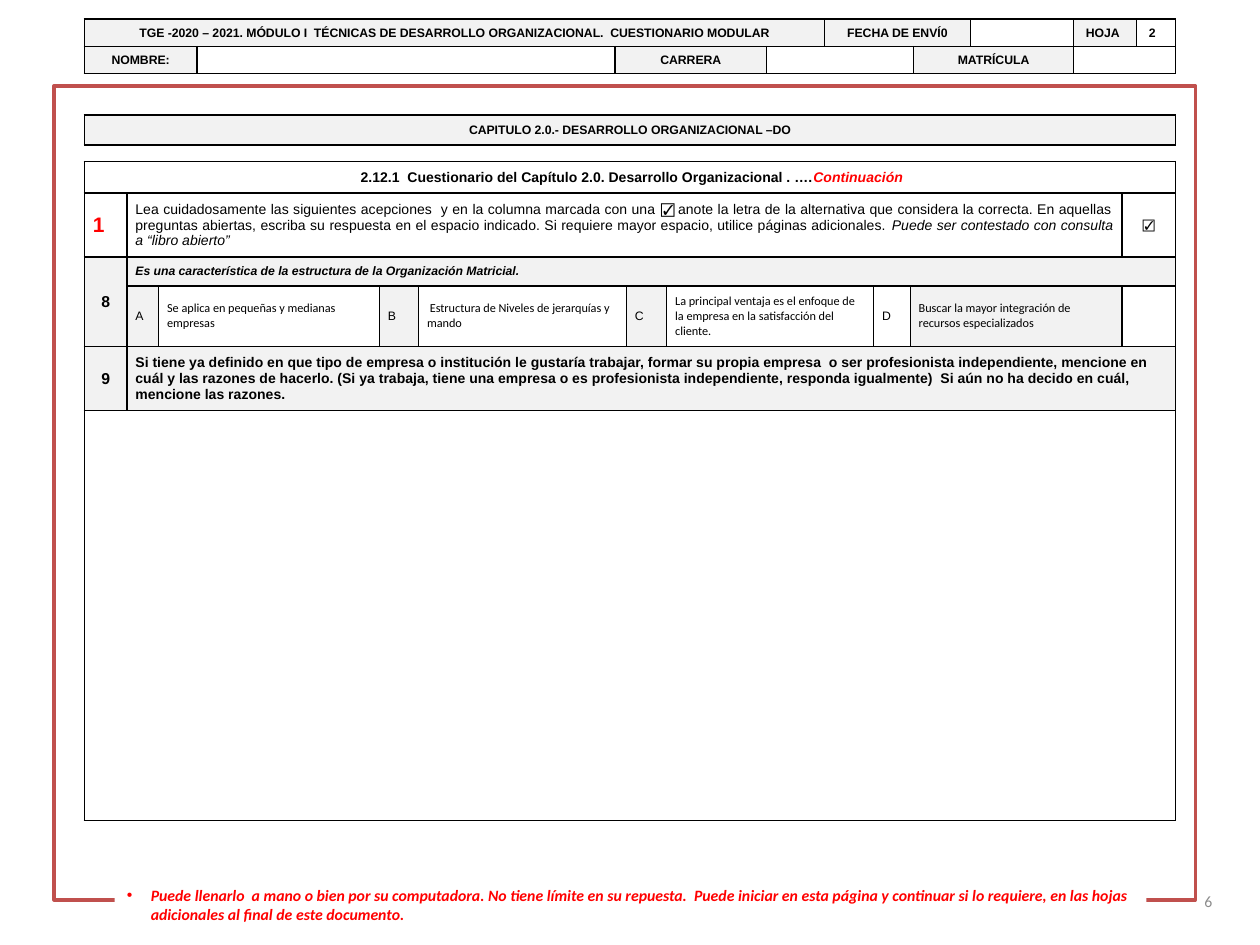
from lxml.etree import SubElement
from pptx import Presentation
from pptx.dml.color import RGBColor
from pptx.enum.shapes import MSO_SHAPE
from pptx.enum.text import MSO_ANCHOR, PP_ALIGN
from pptx.oxml.ns import qn
from pptx.util import Cm, Pt

BLACK, RED, WHITE, GREY = "000000", "FF0000", "FFFFFF", "F2F2F2"
LEFT, CENTER, RIGHT, JUSTIFY = PP_ALIGN.LEFT, PP_ALIGN.CENTER, PP_ALIGN.RIGHT, PP_ALIGN.JUSTIFY


def colour(code):
    return RGBColor.from_string(code)


def write(frame, runs, align):
    """Write (text, format) runs; each run keeps the formats of the one before."""
    paragraph = frame.paragraphs[0]
    paragraph.alignment = align
    style = {"name": "Arial", "size": 7, "bold": True, "italic": False, "color": BLACK}
    for text, changes in runs:
        style.update(changes)
        run = paragraph.add_run()
        run.text = text
        for attribute, value in style.items():
            if attribute == "color":
                run.font.color.rgb = colour(value)
            else:
                setattr(run.font, attribute, Pt(value) if attribute == "size" else value)
    return paragraph


deck = Presentation()
deck.slide_width, deck.slide_height = Cm(25.4), Cm(19.05)
slide = deck.slides.add_slide(deck.slide_layouts[6])

# Red page frame
frame = slide.shapes.add_shape(MSO_SHAPE.RECTANGLE, Cm(1.09), Cm(1.73), Cm(23.01), Cm(16.41))
frame.shadow.inherit = False
frame.fill.solid()
frame.fill.fore_color.rgb = colour(WHITE)
frame.line.color.rgb = colour("C0504D")
frame.line.width = Pt(2)

# Page number
page_number = slide.shapes.add_textbox(Cm(18.77), Cm(17.65), Cm(5.92), Cm(1.02)).text_frame
page_number.word_wrap = True
page_number.vertical_anchor = MSO_ANCHOR.MIDDLE
write(page_number, [("6", {"name": "Calibri", "size": 9, "bold": False, "color": "8C8C8C"})], RIGHT)

# Closing note over the lower edge of the frame
note = slide.shapes.add_shape(MSO_SHAPE.RECTANGLE, Cm(2.31), Cm(17.93), Cm(20.8), Cm(0.61))
note.shadow.inherit = False
note.fill.solid()
note.fill.fore_color.rgb = colour(WHITE)
note.line.fill.background()
note.text_frame.word_wrap = True
note.text_frame.vertical_anchor = MSO_ANCHOR.MIDDLE
advice = write(note.text_frame, [(
    "Puede llenarlo  a mano o bien por su computadora. No tiene límite en su repuesta.  "
    "Puede iniciar en esta página y continuar si lo requiere, en las hojas adicionales al "
    "final de este documento.",
    {"name": "Calibri", "size": 9, "italic": True, "color": RED})], LEFT)
bullet_format = advice._p.get_or_add_pPr()
bullet_format.set("marL", str(Cm(0.48)))
bullet_format.set("indent", str(-Cm(0.48)))
SubElement(bullet_format, qn("a:buFont")).set("typeface", "Arial")
SubElement(bullet_format, qn("a:buChar")).set("char", "•")

# Table contents: (row, column): (row span, column span, fill, alignment, runs)
header_cells = {
    (0, 0): (1, 4, GREY, CENTER, [(
        "TGE -2020 – 2021. MÓDULO I  TÉCNICAS DE DESARROLLO ORGANIZACIONAL.  "
        "CUESTIONARIO MODULAR", {})]),
    (0, 4): (1, 2, GREY, CENTER, [("FECHA DE ENVÍ0", {})]),
    (0, 7): (1, 1, GREY, LEFT, [("HOJA", {})]),
    (0, 8): (1, 1, WHITE, LEFT, [("2", {})]),
    (1, 0): (1, 1, GREY, CENTER, [("NOMBRE:", {})]),
    (1, 2): (1, 1, GREY, CENTER, [("CARRERA", {})]),
    (1, 3): (1, 2, WHITE, LEFT, []),
    (1, 5): (1, 2, GREY, CENTER, [("MATRÍCULA", {})]),
    (1, 7): (1, 2, WHITE, LEFT, []),
}
question_cells = {
    (0, 0): (1, 10, GREY, CENTER, [("CAPITULO 2.0.- DESARROLLO ORGANIZACIONAL –DO", {})]),
    (1, 0): (1, 10, WHITE, LEFT, []),
    (2, 0): (1, 10, WHITE, CENTER, [
        (" 2.12.1  Cuestionario del Capítulo 2.0. Desarrollo Organizacional . ….", {"size": 8}),
        ("Continuación", {"color": RED, "italic": True})]),
    (3, 0): (1, 1, WHITE, JUSTIFY, [("1", {"size": 12, "color": RED})]),
    (3, 1): (1, 8, WHITE, JUSTIFY, [
        ("Lea cuidadosamente las siguientes acepciones  y en la columna marcada con una ☑ "
         "anote la letra de la alternativa que considera la correcta. En aquellas preguntas "
         "abiertas, escriba su respuesta en el espacio indicado. Si requiere mayor espacio, "
         "utilice páginas adicionales. ", {"size": 8, "bold": False}),
        ("Puede ser contestado con consulta a “libro abierto”", {"italic": True})]),
    (3, 9): (1, 1, WHITE, CENTER, [("☑", {})]),
    (4, 0): (2, 1, GREY, CENTER, [("8", {"size": 9})]),
    (4, 1): (1, 9, GREY, LEFT, [(
        "Es una característica de la estructura de la Organización Matricial.",
        {"italic": True})]),
    (6, 0): (1, 1, GREY, CENTER, [("9", {"size": 9})]),
    (6, 1): (1, 9, GREY, LEFT, [(
        "Si tiene ya definido en que tipo de empresa o institución le gustaría trabajar, formar "
        "su propia empresa  o ser profesionista independiente, mencione en  cuál y las razones "
        "de hacerlo. (Si ya trabaja, tiene una empresa o es profesionista independiente, "
        "responda igualmente)  Si aún no ha decido en cuál, mencione las razones.",
        {"size": 8})]),
    (7, 0): (1, 10, WHITE, LEFT, []),
}
# Alternatives of question 8: a letter and an answer each
alternatives = [
    ("A", GREY, "Se aplica en pequeñas y medianas empresas", WHITE),
    ("B", GREY, " Estructura de Niveles de jerarquías y mando", WHITE),
    ("C", GREY, "La principal ventaja es el enfoque de la empresa en la satisfacción del cliente.",
     WHITE),
    ("D", WHITE, "Buscar la mayor integración de recursos especializados", GREY),
]
for index, (letter, letter_fill, answer, answer_fill) in enumerate(alternatives):
    column = 1 + 2 * index
    question_cells[5, column] = (1, 1, letter_fill, LEFT, [(letter, {"bold": False})])
    question_cells[5, column + 1] = (
        1, 1, answer_fill, LEFT, [(answer, {"name": "Calibri", "bold": False})])

# Tables: top, column widths, row heights, margins, contents, rows open at the sides
tables = [
    (0.38, [2.27, 8.43, 3.05, 1.17, 1.8, 1.14, 2.08, 1.27, 0.79], [0.56, 0.52],
     (0.25, 0.12), header_cells, []),
    (2.32, [0.86, 0.64, 4.45, 0.79, 4.19, 0.81, 4.17, 0.74, 4.27, 1.08],
     [0.6, 0.34, 0.63, 1.27, 0.58, 1.22, 1.27, 8.26], (0.17, 0.14), question_cells, [1]),
]
for top, widths, heights, (side, edge), contents, open_rows in tables:
    grid = slide.shapes.add_table(len(heights), len(widths), Cm(1.7), Cm(top),
                                  Cm(sum(widths)), Cm(sum(heights))).table
    grid.first_row = grid.horz_banding = False
    for column, width in zip(grid.columns, widths):
        column.width = Cm(width)
    for row, height in zip(grid.rows, heights):
        row.height = Cm(height)

    # Borders and empty white cells
    for row in range(len(heights)):
        for column in range(len(widths)):
            cell = grid.cell(row, column)
            for border in ("lnL", "lnR", "lnT", "lnB"):
                line = SubElement(cell._tc.get_or_add_tcPr(), qn("a:" + border), w=str(Pt(1)))
                if row in open_rows and border in ("lnL", "lnR"):
                    SubElement(line, qn("a:noFill"))
                else:
                    SubElement(SubElement(line, qn("a:solidFill")), qn("a:srgbClr"), val=BLACK)
            cell.fill.solid()
            cell.fill.fore_color.rgb = colour(WHITE)
            cell.margin_left = cell.margin_right = Cm(side)
            cell.margin_top = cell.margin_bottom = Cm(0)
            if not contents.get((row, column), [None])[-1]:
                SubElement(cell.text_frame.paragraphs[0]._p, qn("a:endParaRPr"), sz="400")

    # Spans, fills and wording
    for (row, column), (row_span, column_span, fill, align, runs) in contents.items():
        cell = grid.cell(row, column)
        if row_span * column_span > 1:
            cell.merge(grid.cell(row + row_span - 1, column + column_span - 1))
        cell.fill.fore_color.rgb = colour(fill)
        cell.vertical_anchor = MSO_ANCHOR.MIDDLE
        if runs:
            cell.margin_top = cell.margin_bottom = Cm(edge)
            write(cell.text_frame, runs, align)

deck.save("out.pptx")
